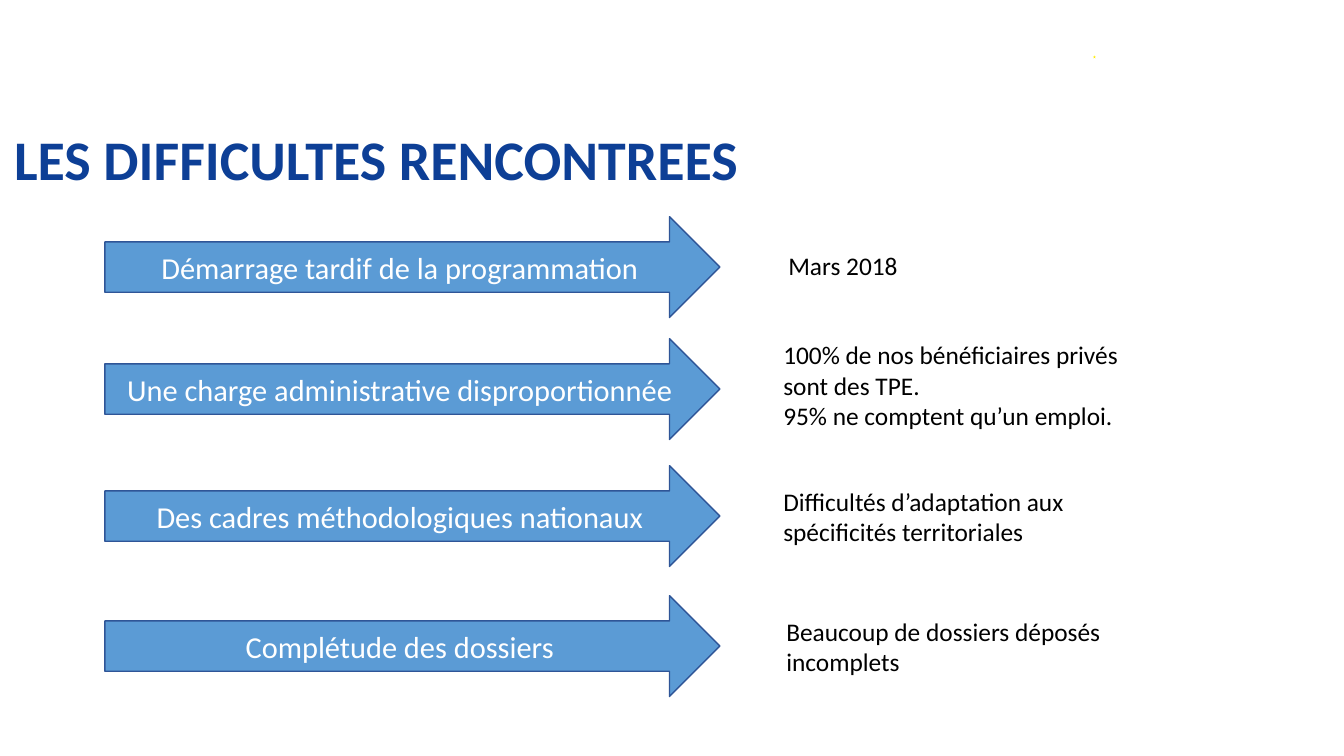
"""Build the slide on the difficulties met, with arrows and their notes."""
import pptx
import pptx.dml.color
import pptx.enum.shapes
import pptx.enum.text
import pptx.util

Inches = pptx.util.Inches
Pt = pptx.util.Pt
RGBColor = pptx.dml.color.RGBColor
SHAPE = pptx.enum.shapes.MSO_SHAPE
ALIGN = pptx.enum.text.PP_ALIGN

NAVY = RGBColor(0x0D, 0x3F, 0x96)
BLUE = RGBColor(0x5B, 0x9B, 0xD5)
EDGE = RGBColor(0x2F, 0x55, 0x97)
GOLD = RGBColor(0xFF, 0xED, 0x00)
WHITE = RGBColor(0xFF, 0xFF, 0xFF)
BLACK = RGBColor(0x00, 0x00, 0x00)

ROWS = [
    (2.15, "Démarrage tardif de la programmation",
     (7.72, 2.43, 1.69, 0.41), "Mars 2018"),
    (3.36, "Une charge administrative disproportionnée",
     (7.67, 3.32, 3.75, 1.02),
     "100% de nos bénéficiaires privés sont des TPE.\n"
     "95% ne comptent qu’un emploi."),
    (4.62, "Des cadres méthodologiques nationaux",
     (7.67, 4.77, 3.75, 0.71),
     "Difficultés d’adaptation aux spécificités territoriales"),
    (5.91, "Complétude des dossiers",
     (7.7, 6.06, 3.75, 0.71), "Beaucoup de dossiers déposés incomplets"),
]


def write(frame, text, size, color, bold=False, align=ALIGN.LEFT):
    """Fill a text frame and style all its runs."""
    frame.word_wrap = True
    frame.text = text
    for para in frame.paragraphs:
        para.alignment = align
        for run in para.runs:
            run.font.name = "Calibri"
            run.font.size = Pt(size)
            run.font.bold = bold
            run.font.color.rgb = color


def add_form(slide, kind, box, fill):
    """Add a flat preset shape without a line."""
    form = slide.shapes.add_shape(kind, *map(Inches, box))
    form.shadow.inherit = False
    form.fill.solid()
    form.fill.fore_color.rgb = fill
    form.line.fill.background()
    return form


def add_title(slide, text):
    """Add the slide title."""
    frame = slide.shapes.add_textbox(
        *map(Inches, (0.13, 1.57, 10.59, 0.38))).text_frame
    frame.margin_left = Inches(0.01)
    frame.margin_top = frame.margin_right = frame.margin_bottom = 0
    write(frame, text, 39.9, NAVY, bold=True)
    frame.paragraphs[0].line_spacing = Pt(23.7)


def add_arrow(slide, top, text):
    """Add a labelled arrow at the given height."""
    arrow = add_form(slide, SHAPE.RIGHT_ARROW, (1.04, top, 6.1, 1), BLUE)
    arrow.line.color.rgb = EDGE
    arrow.line.width = Pt(1)
    arrow.text_frame.vertical_anchor = pptx.enum.text.MSO_ANCHOR.MIDDLE
    write(arrow.text_frame, text, 21.7, WHITE, align=ALIGN.CENTER)


def add_note(slide, box, text):
    """Add the note beside an arrow."""
    frame = slide.shapes.add_textbox(*map(Inches, box)).text_frame
    write(frame, text, 18.1, BLACK)
    frame.auto_size = pptx.enum.text.MSO_AUTO_SIZE.SHAPE_TO_FIT_TEXT


def main():
    """Build and save the deck."""
    deck = pptx.Presentation()
    deck.slide_width = Inches(13.33)
    deck.slide_height = Inches(7.5)
    slide = deck.slides.add_slide(deck.slide_layouts[6])
    add_form(slide, SHAPE.STAR_5_POINT, (10.84, 0.55, 0.03, 0.03), GOLD)
    add_title(slide, "LES DIFFICULTES RENCONTREES")
    for top, label, box, note in ROWS:
        add_arrow(slide, top, label)
        add_note(slide, box, note)
    deck.save("out.pptx")


if __name__ == "__main__":
    main()
